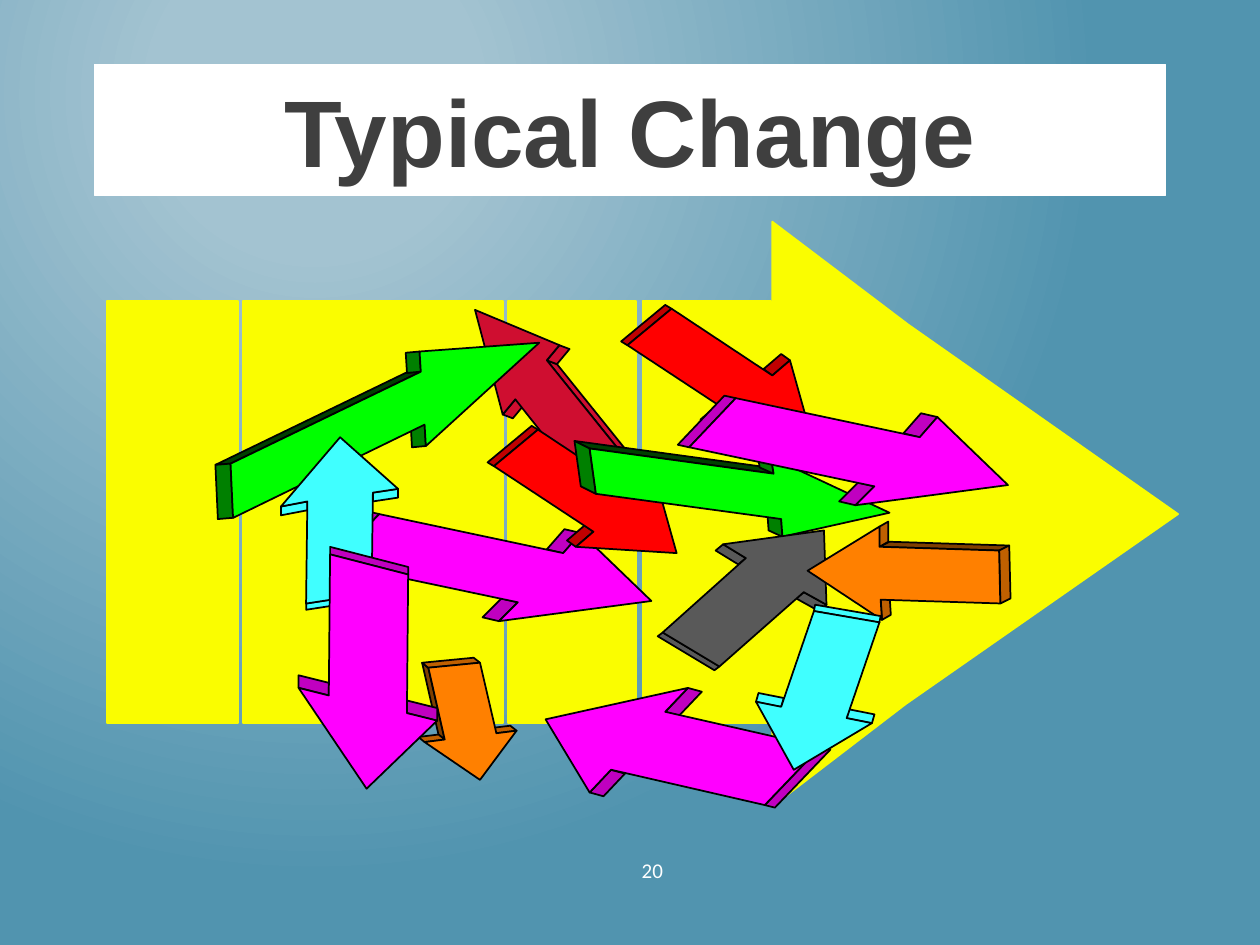
import pptx
import pptx.dml.color
import pptx.enum.shapes
import pptx.enum.text
import pptx.oxml
import pptx.oxml.ns
import pptx.util

Inches = pptx.util.Inches
RGBColor = pptx.dml.color.RGBColor

SKY = RGBColor(0xA3, 0xC3, 0xD1)
TEAL = RGBColor(0x51, 0x94, 0xAF)
YELLOW = RGBColor(0xFA, 0xFD, 0x00)
WHITE = RGBColor(0xFF, 0xFF, 0xFF)
BLACK = RGBColor(0x00, 0x00, 0x00)
CHARCOAL = RGBColor(0x3F, 0x3F, 0x3F)
GRAY = RGBColor(0x59, 0x59, 0x59)
CRIMSON = RGBColor(0xCF, 0x0E, 0x30)
CYAN = RGBColor(0x40, 0xFF, 0xFF)
MAGENTA = RGBColor(0xFF, 0x00, 0xFF)
PURPLE = RGBColor(0xC0, 0x00, 0xC0)
RED = RGBColor(0xFF, 0x00, 0x00)
DARK_RED = RGBColor(0xC0, 0x00, 0x00)
GREEN = RGBColor(0x00, 0xFF, 0x00)
MID_GREEN = RGBColor(0x00, 0x80, 0x00)
DARK_GREEN = RGBColor(0x00, 0x40, 0x00)
ORANGE = RGBColor(0xFF, 0x80, 0x00)
RUST = RGBColor(0xC0, 0x60, 0x00)
BROWN = RGBColor(0x80, 0x40, 0x00)

FLAT_RIGHT = [(0, 0.39), (0.37, 0), (1.83, 0.31), (1.97, 0.15),
              (2.53, 0.69), (1.32, 0.85), (1.47, 0.7)]
STEEP_LEFT = [(1.05, 1.63), (1.31, 1.32), (0.57, 0.4), (0.67, 0.28),
              (0, 0), (0.22, 0.83), (0.32, 0.71)]
RISING = [(0.02, 1.39), (0, 0.96), (1.51, 0.23), (1.5, 0.07),
          (2.45, 0), (1.55, 0.82), (1.54, 0.65)]
FALLING = [(0.35, 0), (0, 0.29), (0.79, 0.81), (0.65, 0.93),
           (1.45, 0.98), (1.29, 0.41), (1.15, 0.53)]
LEVEL_RIGHT = [(0.05, 0.36), (0, 0), (1.46, 0.2), (1.44, 0.07),
               (2.38, 0.51), (1.53, 0.7), (1.52, 0.56)]
SHORT_DOWN = [(0.44, 0), (0.03, 0.04), (0.16, 0.61), (0, 0.63),
              (0.44, 0.93), (0.73, 0.54), (0.57, 0.56)]
UPWARD = [(0.2, 1.32), (0.72, 1.24), (0.73, 0.44), (0.93, 0.41),
          (0.47, 0), (0, 0.55), (0.21, 0.51)]
UP_RIGHT = [(0.45, 1.08), (0, 0.81), (0.66, 0.22), (0.48, 0.11),
            (1.28, 0), (1.3, 0.59), (1.12, 0.49)]
LEVEL_LEFT = [(1.53, 0.61), (1.52, 0.19), (0.57, 0.16), (0.57, 0),
              (0, 0.35), (0.59, 0.74), (0.58, 0.58)]
LONG_DOWN = [(0.25, 0), (0.87, 0.16), (0.86, 1.26), (1.1, 1.32),
             (0.54, 1.86), (0, 1.06), (0.24, 1.12)]
FLAT_LEFT = [(2.18, 0.47), (1.74, 0.93), (0.52, 0.65), (0.35, 0.83),
             (0, 0.25), (1.13, 0), (0.95, 0.19)]
DOWN_LEFT = [(0.98, 0.09), (0.46, 0), (0.2, 0.76), (0, 0.72),
             (0.3, 1.26), (0.92, 0.89), (0.72, 0.85)]

SMALL_ARROWS = [
    (2.64, 4.08, FLAT_RIGHT, (-0.09, -0.02), (-0.13, -0.03), MAGENTA, PURPLE, None),
    (3.77, 2.46, STEEP_LEFT, (0.08, 0.03), (0.08, 0.03), CRIMSON, CRIMSON, CRIMSON),
    (1.83, 2.72, RISING, (-0.12, 0.01), (-0.11, 0.01), GREEN, MID_GREEN, DARK_GREEN),
    (3.92, 3.41, FALLING, (-0.05, -0.03), (-0.07, -0.05), RED, DARK_RED, None),
    (4.68, 3.56, LEVEL_RIGHT, (-0.12, -0.06), (-0.11, -0.05), GREEN, MID_GREEN, DARK_GREEN),
    (3.37, 5.26, SHORT_DOWN, (-0.05, -0.04), (-0.05, -0.04), ORANGE, RUST, BROWN),
    (2.23, 3.47, UPWARD, (0, 0.05), (0, 0.07), CYAN, CYAN, None),
    (5.26, 4.21, UP_RIGHT, (-0.04, 0.03), (-0.06, 0.05), GRAY, GRAY, None),
    (6.41, 4.18, LEVEL_LEFT, (0.08, -0.04), (0.07, -0.04), ORANGE, RUST, BROWN),
    (2.37, 4.4, LONG_DOWN, (0, -0.06), (0, -0.1), MAGENTA, PURPLE, None),
    (4.33, 5.46, FLAT_LEFT, (0.08, 0.02), (0.11, 0.03), MAGENTA, PURPLE, None),
    (4.98, 2.45, FALLING, (-0.05, -0.03), (-0.07, -0.05), RED, DARK_RED, None),
    (6, 4.85, DOWN_LEFT, (0.01, -0.05), (0.02, -0.07), CYAN, CYAN, None),
    (5.47, 3.16, FLAT_RIGHT, (-0.09, -0.02), (-0.13, -0.03), MAGENTA, PURPLE, None),
]


def paint(shape, fill, line, width=1):
    """Give a shape a solid fill, an outline and no shadow."""
    shape.shadow.inherit = False
    shape.fill.solid()
    shape.fill.fore_color.rgb = fill
    shape.line.color.rgb = line
    shape.line.width = pptx.util.Pt(width)


def add_polygon(shapes, left, top, points, fill, line):
    """Draw a closed outline whose points are measured from left and top."""
    corners = [(Inches(left + x), Inches(top + y)) for x, y in points]
    builder = shapes.build_freeform(*corners[0], scale=1.0)
    builder.add_line_segments(corners[1:], close=True)
    paint(builder.convert_to_shape(), fill, line)


def add_small_arrow(slide, left, top, face, tail_depth, head_depth, front, side, shaft):
    """Draw a raised arrow: its visible side facets, then its face."""
    shapes = slide.shapes.add_group_shape().shapes
    facets = [(0, 1, tail_depth, side), (2, 3, head_depth, side), (5, 6, head_depth, side)]
    if shaft is not None:
        facets.insert(0, (1, 2, tail_depth, shaft))
    for start, end, (dx, dy), colour in facets:
        (x1, y1), (x2, y2) = face[start], face[end]
        facet = [(x1, y1), (x2, y2), (x2 + dx, y2 + dy), (x1 + dx, y1 + dy)]
        add_polygon(shapes, left, top, facet, colour, BLACK)
    add_polygon(shapes, left, top, face, front, BLACK)


def add_big_arrow(slide, left, top, width, height):
    """Draw the yellow arrow: five shaft segments and a two-part head."""
    shapes = slide.shapes.add_group_shape().shapes
    shaft_top, shaft_height = top + 0.63, 3.35
    for offset, segment_width in [(0, 1.04), (1.08, 1.03), (2.1, 1.04), (3.18, 1.02), (4.25, 1.02)]:
        segment = shapes.add_shape(
            pptx.enum.shapes.MSO_SHAPE.RECTANGLE, Inches(left + offset), Inches(shaft_top),
            Inches(segment_width), Inches(shaft_height))
        paint(segment, YELLOW, YELLOW)
    base, neck = 5.28, 6.35
    neck_top, neck_bottom = 0.81, 3.82
    head_base = [(neck, neck_top), (base, 0), (base, height), (neck, neck_bottom)]
    head_tip = [(neck, neck_top), (neck, neck_bottom), (width, height / 2)]
    for part in (head_base, head_tip):
        add_polygon(shapes, left, top, part, YELLOW, YELLOW)


def add_run(paragraph, text, font, size, colour, bold=False):
    """Append one formatted run to a paragraph."""
    run = paragraph.add_run()
    run.text = text
    run.font.name = font
    run.font.size = pptx.util.Pt(size)
    run.font.bold = bold
    run.font.color.rgb = colour


def add_title(slide, left, top, width, height):
    """Move the title placeholder into its white banner and fill it in."""
    title = slide.shapes.title
    title.left, title.top = Inches(left), Inches(top)
    title.width, title.height = Inches(width), Inches(height)
    paint(title, WHITE, WHITE, 0.75)
    frame = title.text_frame
    frame.auto_size = pptx.enum.text.MSO_AUTO_SIZE.NONE
    frame.vertical_anchor = pptx.enum.text.MSO_ANCHOR.MIDDLE
    frame.paragraphs[0].alignment = pptx.enum.text.PP_ALIGN.CENTER
    add_run(frame.paragraphs[0], "Typical Change", "Arial", 54, CHARCOAL, True)


def add_page_number(slide, left, top, width, height):
    """Write the page number, right aligned in its box."""
    number = slide.shapes.add_textbox(Inches(left), Inches(top), Inches(width), Inches(height))
    frame = number.text_frame
    frame.word_wrap = True
    frame.vertical_anchor = pptx.enum.text.MSO_ANCHOR.MIDDLE
    frame.paragraphs[0].alignment = pptx.enum.text.PP_ALIGN.RIGHT
    add_run(frame.paragraphs[0], "20", "Calibri", 12, WHITE)


def set_background(slide):
    """Fill the background with a circular gradient from sky to teal."""
    fill = slide.background.fill
    fill.gradient()
    for stop, position, colour in zip(fill.gradient_stops, (0.2, 1), (SKY, TEAL)):
        stop.position = position
        stop.color.rgb = colour
    gradient = slide.background._cSld.find(".//" + pptx.oxml.ns.qn("a:gradFill"))
    linear = gradient.find(pptx.oxml.ns.qn("a:lin"))
    circle = pptx.oxml.parse_xml(
        f'<a:path {pptx.oxml.ns.nsdecls("a")} path="circle">'
        '<a:fillToRect l="50000" t="20000" r="100000" b="100000"/></a:path>')
    gradient.replace(linear, circle)


def main():
    """Build the slide and save it."""
    deck = pptx.Presentation()
    deck.slide_width, deck.slide_height = Inches(10), Inches(7.5)
    slide = deck.slides.add_slide(deck.slide_layouts[5])
    set_background(slide)
    add_big_arrow(slide, 0.85, 1.76, 8.5, 4.64)
    for arrow in SMALL_ARROWS:
        add_small_arrow(slide, *arrow)
    add_title(slide, 0.75, 0.51, 8.5, 1.04)
    add_page_number(slide, 3.03, 6.71, 2.33, 0.4)
    deck.save("out.pptx")


if __name__ == "__main__":
    main()
